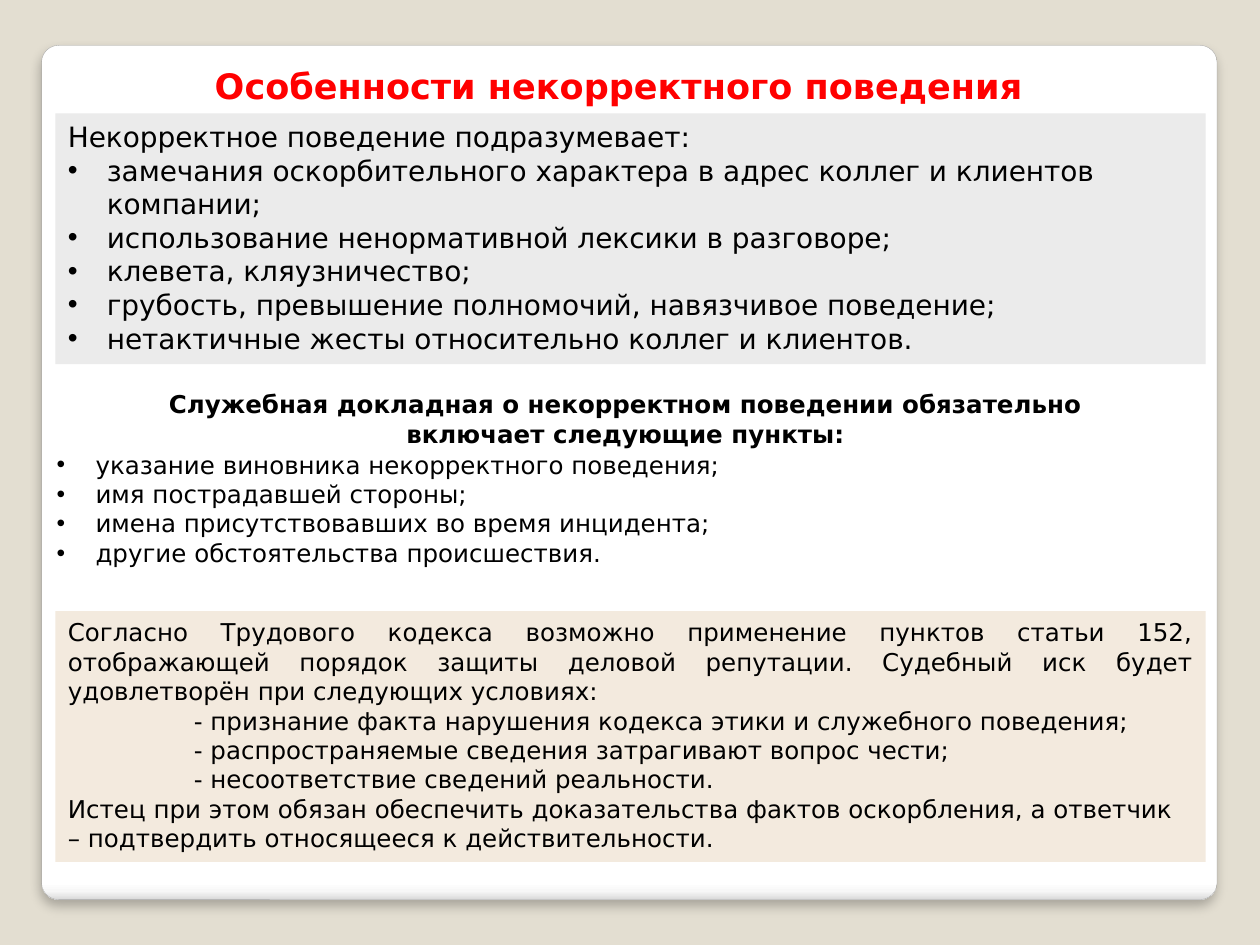
"""Build a slide on the signs of improper behaviour at work and its consequences."""
import dataclasses
import typing

import lxml.etree
import pptx
import pptx.dml.color
import pptx.enum.shapes
import pptx.enum.text
import pptx.oxml
import pptx.oxml.ns
import pptx.util

FONT = "DejaVu Sans"
WIDTH, HEIGHT = pptx.util.Inches(10), pptx.util.Inches(7.5)
COLORS = {
    "background": "E3DED1", "white": "FFFFFF", "near_edge": "F7F7F7",
    "edge": "DADADA", "outline": "A4A4A4", "title": "FF0000",
    "text": "000000", "gray_panel": "EBEBEB", "beige_panel": "F3EADE",
}
NAMESPACE = pptx.oxml.ns.nsdecls("a")
ALIGN = pptx.enum.text.PP_ALIGN


class Box(typing.NamedTuple):
    """Left, top, width and height in percent of the slide."""
    left: float
    top: float
    width: float
    height: float

    def lengths(self) -> tuple[int, ...]:
        sides = (WIDTH, HEIGHT, WIDTH, HEIGHT)
        return tuple(round(share * side / 100) for share, side in zip(self, sides))


@dataclasses.dataclass
class Line:
    text: str
    align: typing.Any = ALIGN.LEFT
    bullet: bool = False
    margin: float = 0


@dataclasses.dataclass
class Block:
    box: Box
    lines: list[Line]
    size: int = 14
    bold: bool = False
    color: str = "text"
    fill: str | None = None


def rgb(name: str) -> pptx.dml.color.RGBColor:
    return pptx.dml.color.RGBColor.from_string(COLORS[name])


def bullets(*texts: str) -> list[Line]:
    return [Line(text, bullet=True, margin=0.31) for text in texts]


def draw_card(slide, box: Box) -> None:
    shape = slide.shapes.add_shape(
        pptx.enum.shapes.MSO_SHAPE.ROUNDED_RECTANGLE, *box.lengths())
    shape.adjustments[0] = 0.02
    shape.line.color.rgb = rgb("outline")
    shape.line.width = pptx.util.Pt(0.16)
    stops = "".join(
        f'<a:gs pos="{position * 1000}"><a:srgbClr val="{COLORS[name]}"/></a:gs>'
        for position, name in ((0, "white"), (98, "white"), (99, "near_edge"), (100, "edge")))
    gradient = pptx.oxml.parse_xml(
        f'<a:gradFill {NAMESPACE}><a:gsLst>{stops}</a:gsLst><a:lin ang="5400000" scaled="0"/></a:gradFill>')
    shadow = pptx.oxml.parse_xml(
        f'<a:effectLst {NAMESPACE}><a:outerShdw blurRad="{pptx.util.Pt(6)}" '
        f'dist="{pptx.util.Pt(4)}" dir="5400000" algn="tl" rotWithShape="0">'
        f'<a:srgbClr val="{COLORS["text"]}"><a:alpha val="25000"/></a:srgbClr>'
        '</a:outerShdw></a:effectLst>')
    properties = shape.element.spPr
    properties.find(pptx.oxml.ns.qn("a:prstGeom")).addnext(gradient)
    properties.append(shadow)


def add_line(paragraph, line: Line, block: Block) -> None:
    paragraph.alignment = line.align
    properties = paragraph._p.get_or_add_pPr()
    margin = pptx.util.Inches(line.margin)
    properties.set("marL", str(margin))
    properties.set("indent", str(-margin if line.bullet else 0))
    if line.bullet:
        for tag, key, value in (("a:buFont", "typeface", "Arial"), ("a:buChar", "char", "•")):
            lxml.etree.SubElement(properties, pptx.oxml.ns.qn(tag)).set(key, value)
    run = paragraph.add_run()
    run.text = line.text
    run.font.name = FONT
    run.font.size = pptx.util.Pt(block.size)
    run.font.bold = block.bold
    run.font.color.rgb = rgb(block.color)


def draw_block(slide, block: Block) -> None:
    if block.fill:
        shape = slide.shapes.add_shape(
            pptx.enum.shapes.MSO_SHAPE.RECTANGLE, *block.box.lengths())
        shape.shadow.inherit = False
        shape.fill.solid()
        shape.fill.fore_color.rgb = rgb(block.fill)
        shape.line.fill.background()
    else:
        shape = slide.shapes.add_textbox(*block.box.lengths())
    frame = shape.text_frame
    frame.word_wrap = True
    frame.auto_size = pptx.enum.text.MSO_AUTO_SIZE.SHAPE_TO_FIT_TEXT
    frame.vertical_anchor = pptx.enum.text.MSO_ANCHOR.TOP
    for index, line in enumerate(block.lines):
        paragraph = frame.add_paragraph() if index else frame.paragraphs[0]
        add_line(paragraph, line, block)


CARD = Box(3.3, 4.8, 93.3, 90.4)
BLOCKS = [
    Block(Box(1.8, 6.13, 95.6, 5.87),
          [Line("Особенности некорректного поведения ", ALIGN.CENTER)],
          size=20, bold=True, color="title"),
    Block(Box(4.4, 12, 91.3, 26.53),
          [Line("Некорректное поведение подразумевает:"),
           *bullets("замечания оскорбительного характера в адрес коллег и клиентов компании;",
                    "использование ненормативной лексики в разговоре;",
                    "клевета, кляузничество;",
                    "грубость, превышение полномочий, навязчивое поведение;",
                    "нетактичные жесты относительно коллег и клиентов.")],
          size=16, fill="gray_panel"),
    Block(Box(3.5, 46.93, 93.9, 13.87),
          bullets("указание виновника некорректного поведения;",
                  "имя пострадавшей стороны;",
                  "имена присутствовавших во время инцидента;",
                  "другие обстоятельства происшествия.")),
    Block(Box(7.5, 40.53, 84.3, 7.6),
          [Line("Служебная докладная о некорректном поведении обязательно "
                "включает следующие пункты:", ALIGN.CENTER)],
          bold=True),
    Block(Box(4.4, 64.67, 91.3, 26.53),
          [Line("Согласно Трудового кодекса возможно применение пунктов статьи 152, "
                "отображающей порядок защиты деловой репутации. Судебный иск будет "
                "удовлетворён при следующих условиях:", ALIGN.JUSTIFY),
           Line("- признание факта нарушения кодекса этики и служебного поведения;", margin=1),
           Line("- распространяемые сведения затрагивают вопрос чести;", margin=1),
           Line("- несоответствие сведений реальности.", margin=1),
           Line("Истец при этом обязан обеспечить доказательства фактов оскорбления, "
                "а ответчик – подтвердить относящееся к действительности.")],
          fill="beige_panel"),
]


def main() -> None:
    presentation = pptx.Presentation()
    presentation.slide_width, presentation.slide_height = WIDTH, HEIGHT
    slide = presentation.slides.add_slide(presentation.slide_layouts[6])
    slide.background.fill.solid()
    slide.background.fill.fore_color.rgb = rgb("background")
    draw_card(slide, CARD)
    for block in BLOCKS:
        draw_block(slide, block)
    presentation.save("out.pptx")


if __name__ == "__main__":
    main()
